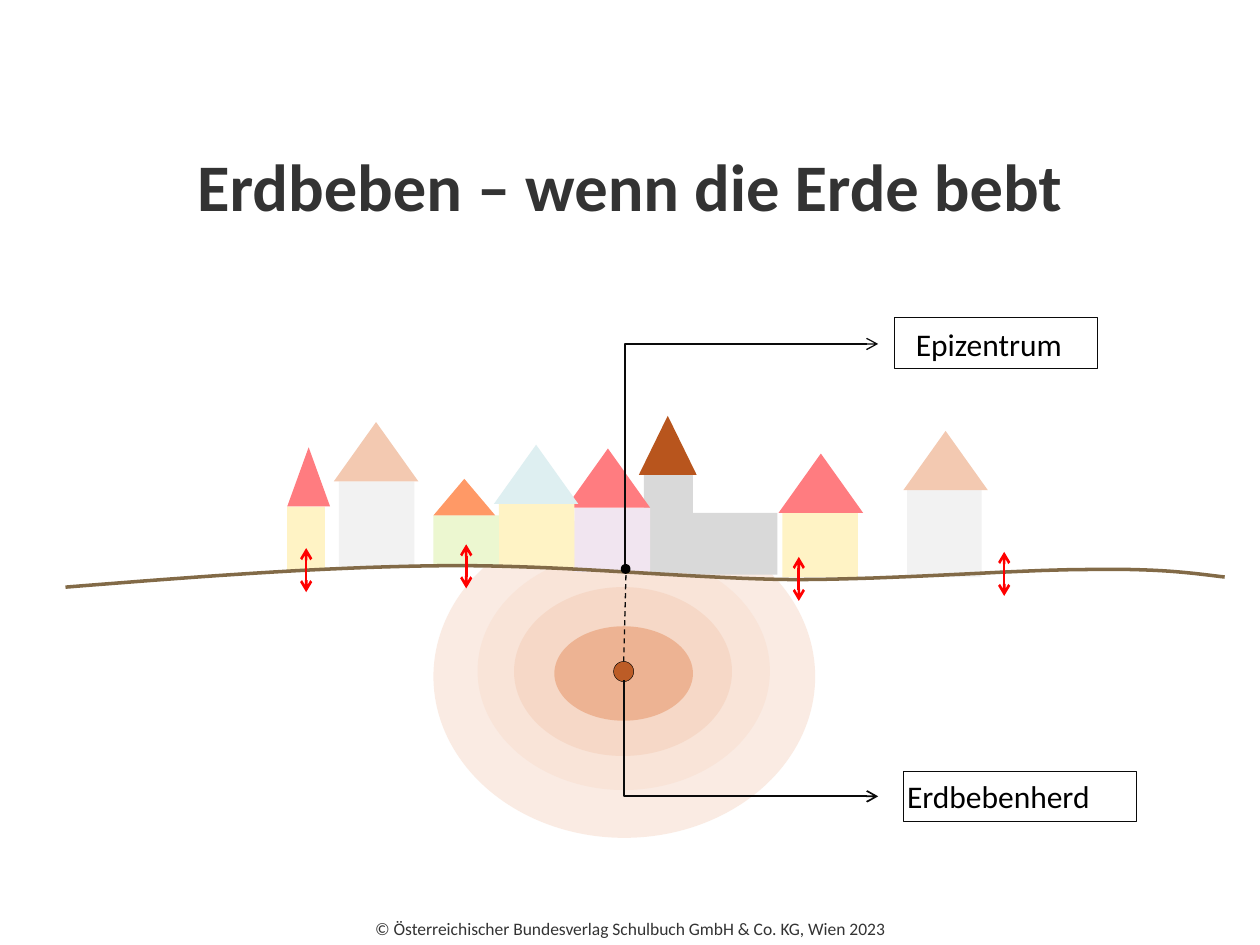
from dataclasses import dataclass

from lxml import etree
from pptx import Presentation
from pptx.dml.color import RGBColor
from pptx.enum import dml, shapes, text
from pptx.oxml.ns import qn
from pptx.util import Inches, Pt

FONT = "Calibri"
INK = RGBColor(0x33, 0x33, 0x33)
BLACK = RGBColor(0, 0, 0)
LINE = RGBColor(0x0A, 0x0A, 0x0A)
RED = RGBColor(0xFF, 0, 0)
SOIL = RGBColor(0x82, 0x6A, 0x47)
RUST = RGBColor(0xB8, 0x55, 0x1D)
PEACH = RGBColor(0xF3, 0xC9, 0xB1)
CORAL = RGBColor(0xFF, 0x7C, 0x80)
ORANGE = RGBColor(0xFF, 0x99, 0x66)
ICE = RGBColor(0xDE, 0xEF, 0xF1)
STONE = RGBColor(0xD9, 0xD9, 0xD9)
PALE_GREY = RGBColor(0xF2, 0xF2, 0xF2)
LILAC = RGBColor(0xF1, 0xE5, 0xF0)
CREAM = RGBColor(0xFF, 0xF3, 0xC5)
LIME = RGBColor(0xEC, 0xF7, 0xD0)
WAVE_OUTER = RGBColor(0xE0, 0x77, 0x3C)
WAVE_MIDDLE = RGBColor(0xF9, 0xE4, 0xD8)
WAVE_INNER = RGBColor(0xEC, 0xAD, 0x8A)

RECT = shapes.MSO_SHAPE.RECTANGLE
OVAL = shapes.MSO_SHAPE.OVAL
TRIANGLE = shapes.MSO_SHAPE.ISOSCELES_TRIANGLE


@dataclass
class Box:
    left: float
    top: float
    width: float
    height: float

    def inner(self, left, top, width, height):
        return Box(self.left + left, self.top + top, width, height)

    def lengths(self):
        return [Inches(v) for v in (self.left, self.top, self.width, self.height)]


def write_text(frame, words, size, color=BLACK, bold=False, align=None,
               anchor=text.MSO_ANCHOR.TOP, wrap=True, bottom=0.05):
    frame.word_wrap = wrap
    frame.vertical_anchor = anchor
    frame.margin_bottom = Inches(bottom)
    para = frame.paragraphs[0]
    para.alignment = align
    span = para.add_run()
    span.text = words
    span.font.name, span.font.size, span.font.bold = FONT, Pt(size), bold
    span.font.color.rgb = color


def add_figure(page, kind, box, fill=None, opacity=100, line=None, width=0.25):
    figure = page.shapes.add_shape(kind, *box.lengths())
    figure.shadow.inherit = False
    if fill is None:
        figure.fill.background()
    else:
        figure.fill.solid()
        figure.fill.fore_color.rgb = fill
        if opacity < 100:
            color = figure.fill._xPr.find(".//" + qn("a:srgbClr"))
            etree.SubElement(color, qn("a:alpha"), val=str(opacity * 1000))
    if line is None:
        figure.line.fill.background()
    else:
        figure.line.color.rgb = line
        figure.line.width = Pt(width)
    return figure


def add_line(page, start, end, color=LINE, width=0.75, elbow=False,
             dashed=False, heads=()):
    kind = shapes.MSO_CONNECTOR.ELBOW if elbow else shapes.MSO_CONNECTOR.STRAIGHT
    line = page.shapes.add_connector(kind, *[Inches(v) for v in (*start, *end)])
    line.line.color.rgb = color
    line.line.width = Pt(width)
    if dashed:
        line.line.dash_style = dml.MSO_LINE.DASH
    properties = line._element.spPr
    if elbow:  # turn right at the start, so the vertical leg comes first
        guides = properties.find(qn("a:prstGeom")).get_or_add_avLst()
        etree.SubElement(guides, qn("a:gd"), name="adj1", fmla="val 0")
    for head in heads:
        etree.SubElement(properties.find(qn("a:ln")), qn("a:" + head), type="arrow")
    etree.SubElement(properties, qn("a:effectLst"))


def place_title(page, box):
    title = page.shapes.title
    title.left, title.top, title.width, title.height = box.lengths()
    write_text(title.text_frame, "Erdbeben – wenn die Erde bebt", 38, INK, True,
               text.PP_ALIGN.CENTER, text.MSO_ANCHOR.MIDDLE)


def place_footer(page, box):
    footer = page.shapes.add_textbox(*box.lengths())
    write_text(footer.text_frame,
               "© Österreichischer Bundesverlag Schulbuch GmbH & Co. KG, Wien 2023",
               10, INK, align=text.PP_ALIGN.CENTER,
               anchor=text.MSO_ANCHOR.BOTTOM, bottom=0.08)


def place_waves(page, box):
    rings = [
        ((0, 0, 3.03, 2.56), WAVE_OUTER, 14),
        ((0.35, 0.29, 2.32, 1.89), WAVE_MIDDLE, 100),
        ((0.64, 0.57, 1.73, 1.34), PEACH, 43),
        ((0.96, 0.88, 1.1, 0.75), WAVE_INNER, 84),
    ]
    for place, color, opacity in rings:
        add_figure(page, OVAL, box.inner(*place), color, opacity)
    # Focus of the quake
    add_figure(page, OVAL, box.inner(1.43, 1.16, 0.16, 0.16), RUST, 92, BLACK)


def place_village(page, box):
    add_figure(page, RECT, box.inner(3.18, 0.76, 0.71, 0.49), STONE)  # nave
    # Walls (left, top, width, height), roof (left, width, height), colours
    houses = [
        ((2.83, 0.46, 0.39, 0.78), (2.79, 0.46, 0.47), STONE, RUST),
        ((2.28, 0.72, 0.6, 0.51), (2.21, 0.67, 0.47), LILAC, CORAL),
        ((1.68, 0.69, 0.6, 0.51), (1.64, 0.67, 0.47), CREAM, ICE),
        ((1.16, 0.78, 0.52, 0.4), (1.16, 0.49, 0.29), LIME, ORANGE),
        ((3.93, 0.76, 0.6, 0.51), (3.9, 0.67, 0.47), CREAM, CORAL),
        ((4.92, 0.58, 0.59, 0.69), (4.89, 0.67, 0.47), PALE_GREY, PEACH),
        ((0.41, 0.51, 0.6, 0.69), (0.37, 0.67, 0.47), PALE_GREY, PEACH),
        ((0, 0.71, 0.3, 0.51), (0, 0.34, 0.47), CREAM, CORAL),
    ]
    for walls, (left, width, height), wall_color, roof_color in houses:
        add_figure(page, RECT, box.inner(*walls), wall_color)
        roof = box.inner(left, walls[1] - height, width, height)
        add_figure(page, TRIANGLE, roof, roof_color)


def place_ground(page, box, steps=20):
    # Cubic curves: two control points and an end point each
    curves = [
        ((1.01, 0.09), (2.02, 0.01), (2.98, 0)),
        ((3.94, -0.01), (4.91, 0.1), (5.76, 0.11)),
        ((6.62, 0.11), (7.55, 0.03), (8.12, 0.03)),
        ((8.69, 0.02), (8.95, 0.06), (9.2, 0.09)),
    ]
    points = [(0, 0.17)]
    for curve in curves:
        knots = (points[-1], *curve)
        for step in range(1, steps + 1):
            t = step / steps
            weights = ((1 - t) ** 3, 3 * t * (1 - t) ** 2, 3 * t * t * (1 - t), t ** 3)
            points.append(tuple(sum(w * k[axis] for w, k in zip(weights, knots))
                                for axis in (0, 1)))
    outline = [(Inches(box.left + x), Inches(box.top + y)) for x, y in points]
    builder = page.shapes.build_freeform(*outline[0])
    builder.add_line_segments(outline[1:], close=False)
    ground = builder.convert_to_shape()
    ground.shadow.inherit = False
    ground.fill.background()
    ground.line.color.rgb = SOIL
    ground.line.width = Pt(2)


def place_label(page, words, frame_box, text_box, wrap):
    add_figure(page, RECT, frame_box, line=LINE)
    label = page.shapes.add_textbox(*text_box.lengths())
    write_text(label.text_frame, words, 18, wrap=wrap)


def place_callouts(page, box):
    x, right = box.left, box.left + 2.02
    add_line(page, (x, 5.4), (right, 6.32), width=1, elbow=True, heads=["tailEnd"])
    add_line(page, (x, 5.25), (x + 0.02, 4.49), dashed=True)
    add_line(page, (x + 0.01, 4.52), (right, 2.73), elbow=True, heads=["tailEnd"])
    place_label(page, "Erdbebenherd", box.inner(2.22, 3.6, 1.85, 0.4),
                box.inner(2.15, 3.6, 1.92, 0.4), True)
    place_label(page, "Epizentrum", box.inner(2.15, 0, 1.61, 0.4),
                box.inner(2.22, 0.01, 1.38, 0.4), False)
    # Epicentre
    add_figure(page, OVAL, box.inner(-0.01, 1.97, 0.05, 0.05), BLACK, line=BLACK, width=2)


def place_tremors(page, box):
    for left, top in ((0, 0.03), (1.27, 0), (3.91, 0.1), (5.54, 0.06)):
        x, y = box.left + left, box.top + top
        add_line(page, (x, y), (x, y + 0.35), RED, 1.5, heads=["headEnd", "tailEnd"])


def main():
    deck = Presentation()
    deck.slide_width, deck.slide_height = Inches(10), Inches(7.5)
    page = deck.slides.add_slide(deck.slide_layouts[5])
    place_title(page, Box(0.5, 1.1, 9, 0.74))
    place_footer(page, Box(0, 7.13, 10, 0.4))
    place_waves(page, Box(3.44, 4.09, 3.03, 2.56))
    place_village(page, Box(2.28, 3.31, 5.56, 1.27))
    place_ground(page, Box(0.52, 4.49, 9.2, 0.17))
    place_callouts(page, Box(4.95, 2.52, 4.07, 4))
    place_tremors(page, Box(2.43, 4.32, 5.54, 0.45))
    deck.save("out.pptx")


if __name__ == "__main__":
    main()
